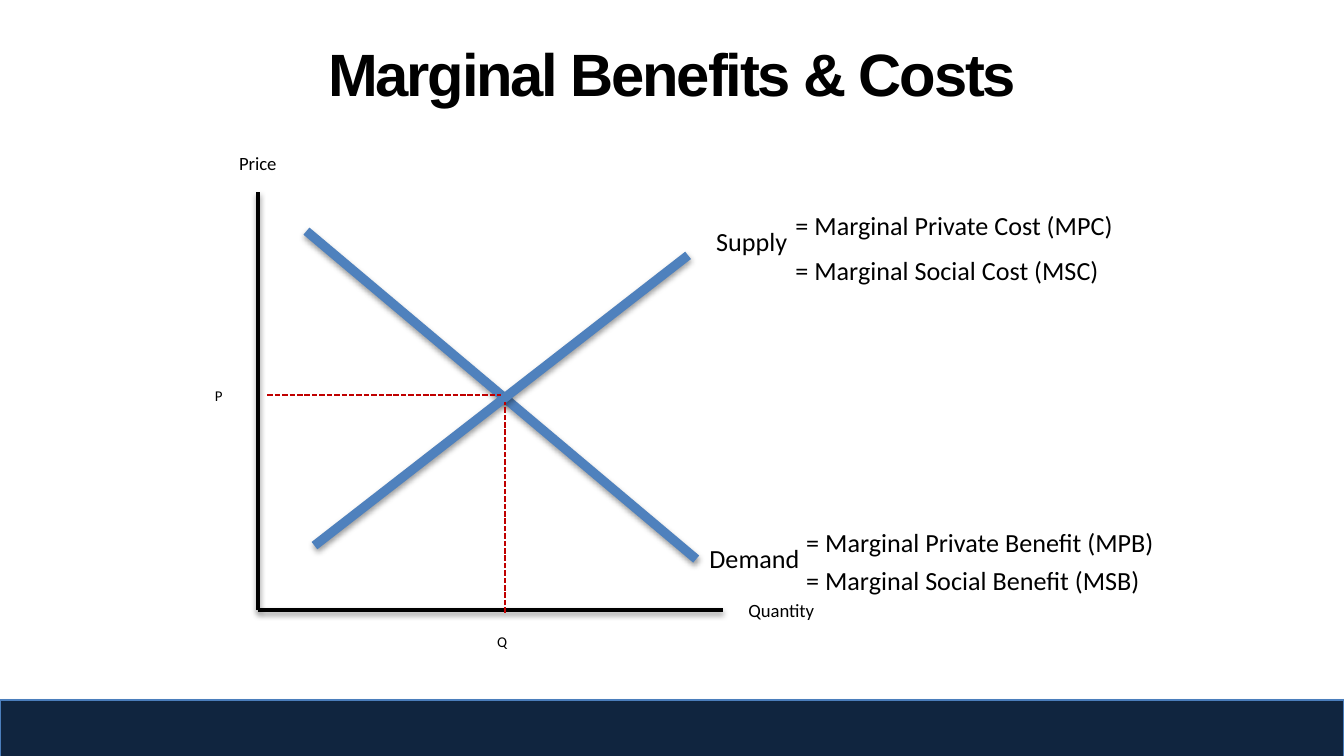
from lxml import etree
from pptx import Presentation
from pptx import util as u
from pptx.dml.color import RGBColor
from pptx.enum import dml, shapes, text
from pptx.oxml.ns import qn

COLORS = {"ink": "000000", "curve": "4F81BD", "guide": "C00000",
          "bar": "10253F", "bar_line": "4B7EBC"}


def rgb(name):
    return RGBColor.from_string(COLORS[name])


class Diagram:
    title_font = "Arial"
    body_font = "Calibri"

    def __init__(self, prs):
        self.s = prs.slides.add_slide(prs.slide_layouts[5])

    def effects(self, sp, alpha=0, blur=3.1, dist=1.6):
        lst = etree.SubElement(sp._element.spPr, qn("a:effectLst"))
        if alpha:
            shadow = etree.SubElement(lst, qn("a:outerShdw"), blurRad=str(u.Pt(blur)),
                                      dist=str(u.Pt(dist)), dir="5400000", rotWithShape="0")
            clr = etree.SubElement(shadow, qn("a:srgbClr"), val=COLORS["ink"])
            etree.SubElement(clr, qn("a:alpha"), val=str(alpha * 1000))

    def title(self, words):
        sp = self.s.shapes.title
        sp.left, sp.top, sp.width, sp.height = map(u.Inches, (0.5, 0.23, 9, 0.94))
        tf = sp.text_frame
        tf.vertical_anchor = text.MSO_ANCHOR.TOP
        tf.margin_left = tf.margin_right = u.Inches(0.07)
        tf.margin_top = tf.margin_bottom = u.Inches(0.04)
        p = tf.paragraphs[0]
        p.alignment = text.PP_ALIGN.CENTER
        r = p.add_run()
        r.text = words
        r.font.name, r.font.size, r.font.bold = self.title_font, u.Pt(32), True
        r.font.color.rgb = rgb("ink")
        r._r.get_or_add_rPr().set("spc", "-120")

    def bar(self, x, y, w, h):
        sp = self.s.shapes.add_shape(shapes.MSO_SHAPE.RECTANGLE, *map(u.Inches, (x, y, w, h)))
        sp.fill.solid()
        sp.fill.fore_color.rgb = rgb("bar")
        sp.line.color.rgb = rgb("bar_line")
        sp.line.width = u.Pt(0.75)
        self.effects(sp, alpha=35, dist=1.8)

    def line(self, start, end, color, width, dashed=False):
        sp = self.s.shapes.add_connector(shapes.MSO_CONNECTOR.STRAIGHT,
                                         *map(u.Inches, (*start, *end)))
        sp.line.color.rgb = rgb(color)
        sp.line.width = u.Pt(width)
        if dashed:
            sp.line.dash_style = dml.MSO_LINE.SQUARE_DOT
        self.effects(sp, alpha=0 if dashed else 38)

    def label(self, words, x, y, w, h, size, wrap=False):
        sp = self.s.shapes.add_textbox(*map(u.Inches, (x, y, w, h)))
        tf = sp.text_frame
        tf.word_wrap = wrap
        tf.auto_size = text.MSO_AUTO_SIZE.SHAPE_TO_FIT_TEXT
        p = tf.paragraphs[0]
        p.text = words
        p.font.name, p.font.size = self.body_font, u.Pt(size)
        p.font.color.rgb = rgb("ink")


def main():
    prs = Presentation()
    prs.slide_width = u.Inches(10)
    prs.slide_height = prs.slide_width * 9 // 16
    d = Diagram(prs)
    d.bar(0, 5.21, 10, 0.42)
    d.title("Marginal Benefits & Costs")

    origin = (1.92, 4.54)
    d.line(origin, (5.38, 4.54), "ink", 2)
    d.line((1.92, 1.43), origin, "ink", 2)
    d.line((2.28, 1.72), (5.18, 4.16), "curve", 5)
    d.line((5.12, 1.9), (2.34, 4.06), "curve", 5)
    d.line((1.99, 2.94), (3.73, 2.94), "guide", 1, dashed=True)
    d.line((3.76, 4.56), (3.76, 2.99), "guide", 1, dashed=True)

    for words, x, y, w, h, size in [
        ("Quantity", 5.47, 4.41, 0.7, 0.27, 10),
        ("Price", 1.68, 1.08, 0.48, 0.27, 10),
        ("Supply", 5.23, 1.63, 0.74, 0.34, 14),
        ("Demand", 5.18, 3.99, 0.88, 0.34, 14),
        ("P", 1.5, 2.83, 0.26, 0.24, 8),
        ("Q", 3.6, 4.66, 0.28, 0.24, 8),
        ("= Marginal Private Cost (MPC)", 5.82, 1.51, 2.59, 0.34, 14),
        ("= Marginal Private Benefit (MPB)", 5.9, 3.87, 2.82, 0.34, 14),
    ]:
        d.label(words, x, y, w, h, size)
    d.label("= Marginal Social Cost (MSC)", 5.82, 1.84, 2.9, 0.64, 14, wrap=True)
    d.label("= Marginal Social Benefit (MSB)", 5.9, 4.15, 2.9, 0.64, 14, wrap=True)
    prs.save("out.pptx")


if __name__ == "__main__":
    main()
